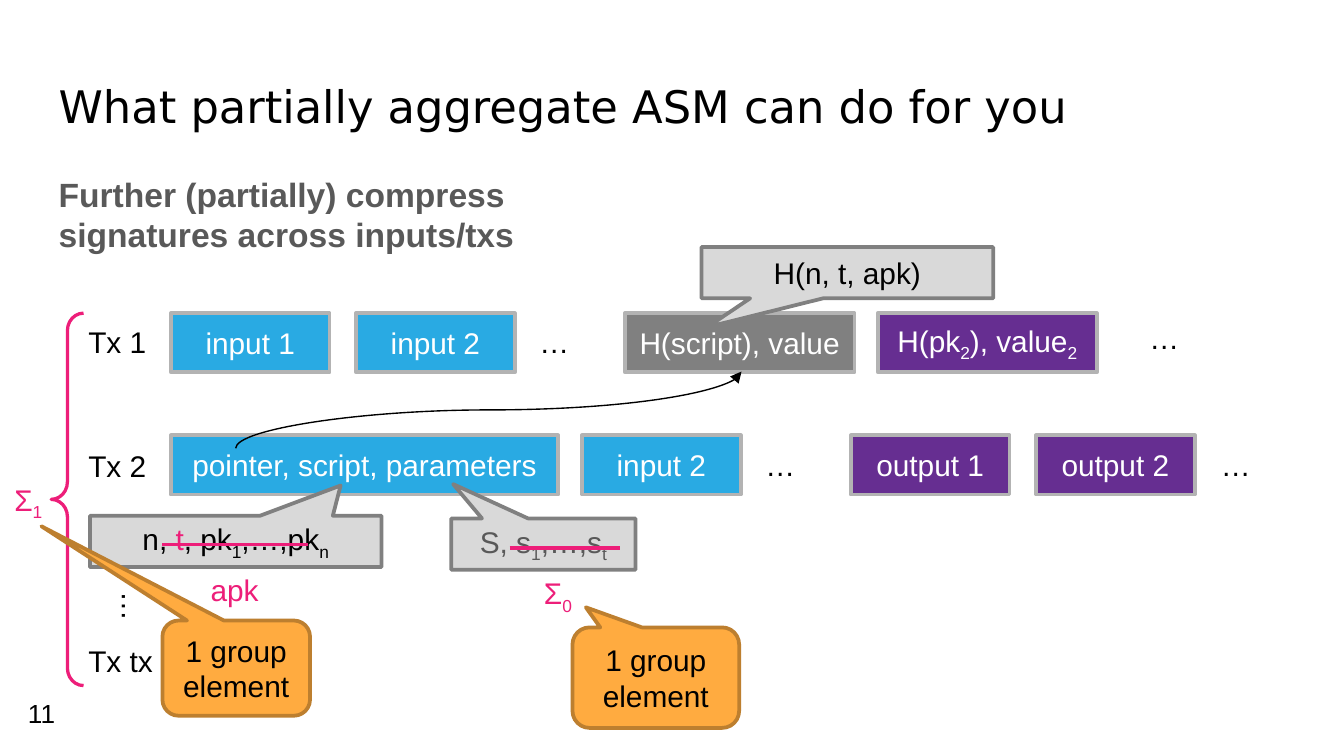
from lxml import etree
from pptx import Presentation
from pptx.dml.color import RGBColor
from pptx.enum import shapes, text
from pptx.oxml.ns import qn
from pptx.util import Cm, Pt

BLACK = RGBColor(0, 0, 0)
WHITE = RGBColor(255, 255, 255)
BLUE = RGBColor(0x29, 0xAA, 0xE3)
PURPLE = RGBColor(0x66, 0x2E, 0x91)
PINK = RGBColor(0xED, 0x1E, 0x79)
ORANGE = RGBColor(0xFF, 0xAB, 0x40)
BROWN = RGBColor(0xBD, 0x7F, 0x2F)
PALE = RGBColor(0xD9, 0xD9, 0xD9)
SILVER = RGBColor(0xB3, 0xB3, 0xB3)
GREY = RGBColor(0x80, 0x80, 0x80)
DARK = RGBColor(0x59, 0x59, 0x59)

KIND = shapes.MSO_SHAPE
LINK = shapes.MSO_CONNECTOR
MID = text.MSO_ANCHOR.MIDDLE
TOP = text.MSO_ANCHOR.TOP
CENTER = text.PP_ALIGN.CENTER
LEFT = text.PP_ALIGN.LEFT
SIDES = ("margin_left", "margin_right", "margin_top", "margin_bottom")


class Board:
    def __init__(self, slide):
        self.items = slide.shapes
        self.font = {"name": "Arial", "size": Pt(16), "bold": False}

    def fill_in(self, shape, runs, color, align=CENTER, **style):
        """Runs are strings; a leading "_" marks a subscript, a pair adds a colour."""
        para = shape.text_frame.paragraphs[0]
        para.alignment = align
        for item in [runs] if isinstance(runs, str) else runs:
            words, tint = (item, color) if isinstance(item, str) else item
            run = para.add_run()
            run.text = words.removeprefix("_")
            for key, value in {**self.font, **style}.items():
                setattr(run.font, key, value)
            run.font.color.rgb = tint
            if words.startswith("_"):
                run.font._element.set("baseline", "-25000")

    def frame(self, shape, pads, **style):
        for side, pad in zip(SIDES, pads):
            setattr(shape.text_frame, side, Cm(pad))
        for key, value in style.items():
            setattr(shape.text_frame, key, value)

    def label(self, runs, at, color=BLACK, align=LEFT, wrap=True, grow=True,
              pads=(0.25, 0.25, 0.13, 0.13), anchor=TOP, turn=0, **style):
        box = self.items.add_textbox(*map(Cm, at))
        fit = text.MSO_AUTO_SIZE.SHAPE_TO_FIT_TEXT if grow else text.MSO_AUTO_SIZE.NONE
        self.frame(box, pads, word_wrap=wrap, auto_size=fit, vertical_anchor=anchor)
        box.rotation = turn
        self.fill_in(box, runs, color, align, **style)

    def shape(self, kind, at, fill, edge, width=2, adj=()):
        item = self.items.add_shape(kind, *map(Cm, at))
        item.shadow.inherit = False
        if fill is None:
            item.fill.background()
        else:
            item.fill.solid()
            item.fill.fore_color.rgb = fill
        item.line.color.rgb = edge
        item.line.width = Pt(width)
        for i, value in enumerate(adj):
            item.adjustments[i] = value
        return item

    def box(self, runs, at, fill, edge=SILVER, color=WHITE, kind=KIND.RECTANGLE, adj=()):
        item = self.shape(kind, at, fill, edge, adj=adj)
        self.frame(item, (0, 0, 0, 0), word_wrap=True, vertical_anchor=MID)
        self.fill_in(item, runs, color)

    def note(self, runs, at, tip, color=BLACK):
        self.box(runs, at, PALE, GREY, color, KIND.RECTANGULAR_CALLOUT, tip)

    def bubble(self, runs, at, tip):
        self.box(runs, at, ORANGE, BROWN, BLACK, KIND.ROUNDED_RECTANGULAR_CALLOUT,
                 (*tip, 0.17))

    def line(self, ends, color, width, kind=LINK.STRAIGHT):
        item = self.items.add_connector(kind, *map(Cm, ends))
        item.line.color.rgb = color
        item.line.width = Pt(width)
        etree.SubElement(item._element.spPr, qn("a:effectLst"))
        return item

    def arrow(self, ends):
        """Curved arrow, given unturned and then turned a quarter clockwise."""
        form = self.line(ends, BLACK, 0.75, LINK.CURVE)._element.spPr
        form.find(qn("a:xfrm")).set("rot", "5400000")
        etree.SubElement(form.find(qn("a:ln")), qn("a:tailEnd"), type="triangle")


def main():
    deck = Presentation()
    deck.slide_width, deck.slide_height = Cm(25.4), Cm(14.29)
    board = Board(deck.slides.add_slide(deck.slide_layouts[6]))
    wide = (0.25,) * 4

    board.label("What partially aggregate ASM can do for you", (0.86, 1.24, 23.67, 1.6),
                grow=False, pads=wide, name="DejaVu Sans", size=Pt(24))
    board.label("Further (partially) compress signatures across inputs/txs",
                (0.86, 3.15, 11.99, 1.8), DARK, size=Pt(18), bold=True)

    # Transactions: row top, then left, width, fill and text of each box
    rows = {
        5.92: [(3.23, 3, BLUE, "input 1"), (6.73, 3, BLUE, "input 2"),
               (11.81, 4.34, GREY, "H(script), value"),
               (16.59, 4.14, PURPLE, ["H(pk", "_2", "), value", "_2"])],
        8.23: [(3.23, 7.32, BLUE, "pointer, script, parameters"),
               (11, 3, BLUE, "input 2"), (16.08, 3, PURPLE, "output 1"),
               (19.58, 3, PURPLE, "output 2")],
    }
    for top, cells in rows.items():
        for left, width, fill, runs in cells:
            board.box(runs, (left, top, width, 1.12), fill)
    for name, top, width in (("Tx 1", 5.99, 1.65), ("Tx 2", 8.33, 1.65),
                             ("Tx tx", 12.01, 1.8)):
        board.label(name, (1.42, top, width, 0.94))
    for left, top, turn in ((9.7, 5.99, 0), (21.23, 5.92, 0), (13.97, 8.31, 0),
                            (22.58, 8.31, 0), (1.75, 11, 90)):
        board.label("…", (left, top, 1.55, 0.94), align=CENTER, turn=turn)

    board.arrow((9.96, 12.53, 8.51, 2.97))
    board.shape(KIND.LEFT_BRACE, (0.97, 5.92, 0.61, 7.04), None, PINK, 1.75, (0.54, 0.5))

    board.note("H(n, t, apk)", (13.26, 4.67, 5.51, 0.97), (-0.48, 1.06))
    board.note(["n, ", ("t", PINK), ", pk", "_1", ",…,pk", "_n"],
               (1.7, 9.75, 5.51, 0.97), (0.36, -1.09))
    board.note(["S, s", "_1", ",…,s", "_t"], (8.53, 9.8, 3.48, 0.97), (-0.49, -1.17), DARK)
    for left, right, y in ((3.07, 5.82, 10.29), (9.63, 11.71, 10.36)):
        board.line((left, y, right, y), PINK, 1.75)

    board.label("apk", (3.73, 10.67, 1.42, 0.94), PINK, wrap=False)
    for digit, left, top in (("_1", 0, 8.97), ("_0", 10.01, 10.74)):
        board.label(["Σ", digit], (left, top, 1.07, 0.94), PINK, CENTER, wrap=False)
    board.bubble("1 group element", (3.07, 11.73, 2.79, 1.8), (-1.32, -1.49))
    board.bubble("1 group element", (10.82, 11.86, 3.15, 1.9), (-0.42, -0.7))

    board.label("11", (0.28, 12.93, 1.52, 1.09), grow=False, pads=wide, anchor=MID,
                size=Pt(14))
    deck.save("out.pptx")


if __name__ == "__main__":
    main()
